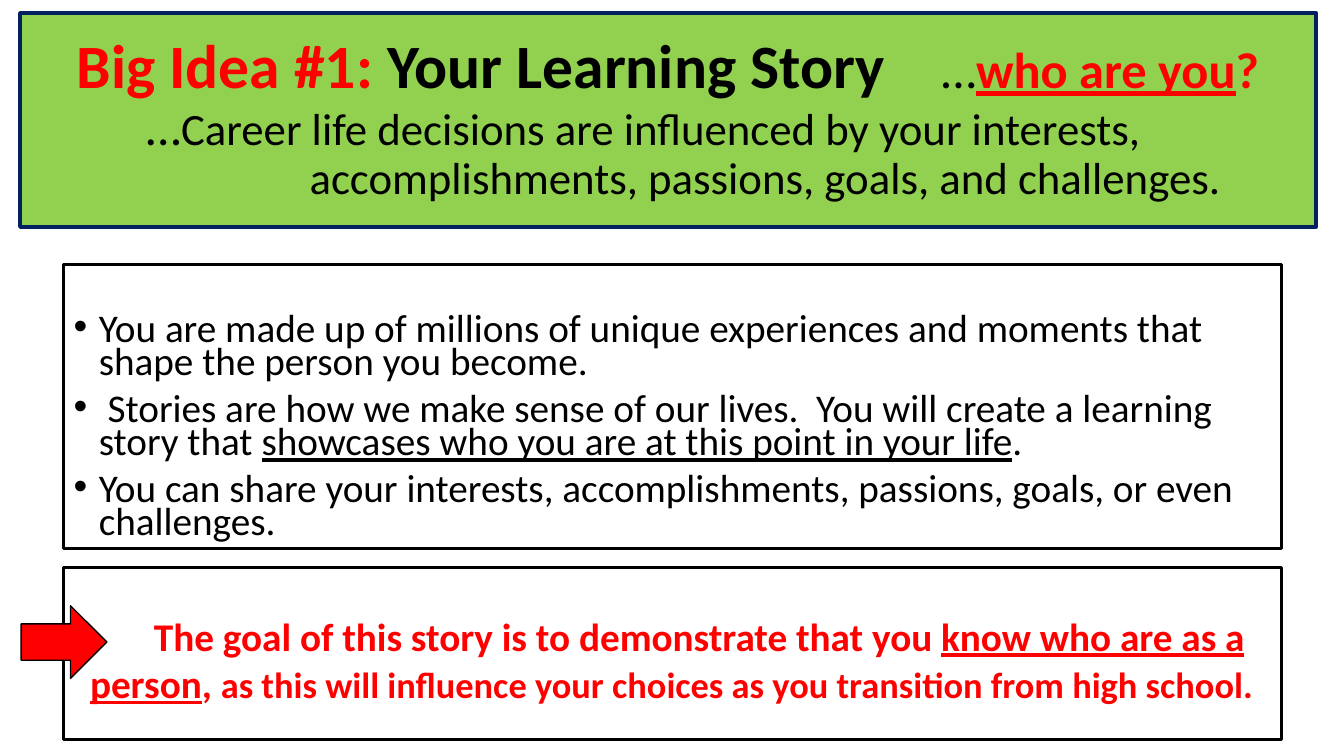
"""Build the Learning Story slide: title banner, bullet list, goal box and arrow."""
from dataclasses import dataclass, field

from pptx import Presentation
from pptx.dml.color import RGBColor
from pptx.enum.shapes import MSO_SHAPE
from pptx.enum.text import MSO_ANCHOR, MSO_AUTO_SIZE, PP_ALIGN
from pptx.util import Inches, Pt

BLACK = RGBColor(0x00, 0x00, 0x00)
WHITE = RGBColor(0xFF, 0xFF, 0xFF)
RED = RGBColor(0xFF, 0x00, 0x00)
GREEN = RGBColor(0x92, 0xD0, 0x50)
NAVY = RGBColor(0x00, 0x20, 0x60)


@dataclass
class Run:
    text: str
    size: float
    color: RGBColor = BLACK
    bold: bool = False
    underline: bool = False
    tracking: float = 0


@dataclass
class Para:
    runs: list[Run]
    align: PP_ALIGN = PP_ALIGN.LEFT
    left: float = 0
    indent: float = 0
    format: dict = field(default_factory=dict)


@dataclass
class Box:
    left: float
    top: float
    width: float
    height: float
    fill: RGBColor
    line: RGBColor
    weight: float


def style_box(s, box: Box) -> None:
    for name in ("left", "top", "width", "height"):
        setattr(s, name, Inches(getattr(box, name)))
    s.fill.solid()
    s.fill.fore_color.rgb = box.fill
    s.line.color.rgb = box.line
    s.line.width = Pt(box.weight)


def add_run(p, run: Run) -> None:
    r = p.add_run()
    r.text = run.text
    values = {"name": "Calibri", "size": Pt(run.size), "bold": run.bold,
              "underline": run.underline}
    for name, value in values.items():
        setattr(r.font, name, value)
    r.font.color.rgb = run.color
    if run.tracking:
        r.font._element.set("spc", str(int(run.tracking * 100)))


def write_text(s, paras: list[Para], anchor: MSO_ANCHOR, margin_top: float = 0.05) -> None:
    tf = s.text_frame
    values = {"word_wrap": True, "auto_size": MSO_AUTO_SIZE.NONE,
              "vertical_anchor": anchor, "margin_top": Inches(margin_top)}
    for name, value in values.items():
        setattr(tf, name, value)
    for i, para in enumerate(paras):
        p = tf.add_paragraph() if i else tf.paragraphs[0]
        for name, value in {"alignment": para.align, **para.format}.items():
            setattr(p, name, value)
        pPr = p._p.get_or_add_pPr()
        pPr.set("marL", str(Inches(para.left)))
        pPr.set("indent", str(Inches(para.indent)))
        for run in para.runs:
            add_run(p, run)


def add_preset(sl, kind: MSO_SHAPE, box: Box):
    s = sl.shapes.add_shape(kind, 0, 0, 0, 0)
    s.shadow.inherit = False
    style_box(s, box)
    return s


def bullet(*runs: Run) -> Para:
    return Para(list(runs), left=0.25, indent=-0.25,
                format={"line_spacing": 0.7, "space_before": Pt(10)})


TITLE_FORMAT = {"line_spacing": 0.9, "space_before": Pt(0)}
TITLE = [
    Para([Run("Big Idea #1: ", 44, RED, True),
          Run("Your Learning Story", 44, bold=True),
          Run(" ", 44, tracking=30),
          Run("…", 36),
          Run("who are you", 36, RED, True, True),
          Run("?", 36, RED, True)], PP_ALIGN.CENTER, format=TITLE_FORMAT),
    Para([Run("…", 36),
          Run("Career life decisions are influenced by your interests,", 32)],
         left=1.15, format=TITLE_FORMAT),
    Para([Run("accomplishments, passions, goals, and challenges.", 32)],
         left=2.77, format=TITLE_FORMAT),
]
BULLETS = [
    bullet(Run("You are made up of millions of unique experiences and moments "
               "that shape the person you become.", 28)),
    bullet(Run(" Stories are how we make sense of our lives.  You will create "
               "a learning story that ", 28),
           Run("showcases who you are at this point in your life", 28, underline=True),
           Run(".", 28)),
    bullet(Run("You can share your interests, accomplishments, passions, goals, "
               "or even challenges.", 28)),
]
GOAL = [
    Para([Run("The goal of this story is to demonstrate that you ", 28, RED, True),
          Run("know who are as a person", 28, RED, True, True),
          Run(", ", 28, RED, True),
          Run("as this will influence your choices as you transition from "
              "high school.", 26, RED, True)], PP_ALIGN.CENTER, indent=0.53),
]


def main() -> None:
    prs = Presentation()
    prs.slide_width, prs.slide_height = Inches(13.33), Inches(7.5)
    sl = prs.slides.add_slide(prs.slide_layouts[1])
    title, body = sl.shapes.title, sl.placeholders[1]
    style_box(title, Box(0.2, 0.13, 12.85, 2.12, GREEN, NAVY, 3))
    write_text(title, TITLE, MSO_ANCHOR.MIDDLE)
    style_box(body, Box(0.63, 2.62, 12.08, 2.82, WHITE, BLACK, 2.25))
    write_text(body, BULLETS, MSO_ANCHOR.TOP, 0.52)
    goal = add_preset(sl, MSO_SHAPE.RECTANGLE,
                      Box(0.63, 5.63, 12.08, 1.71, WHITE, BLACK, 2.25))
    write_text(goal, GOAL, MSO_ANCHOR.MIDDLE, 0.16)
    add_preset(sl, MSO_SHAPE.RIGHT_ARROW, Box(0.21, 6.01, 0.85, 0.72, RED, BLACK, 1))
    prs.save("out.pptx")


if __name__ == "__main__":
    main()
